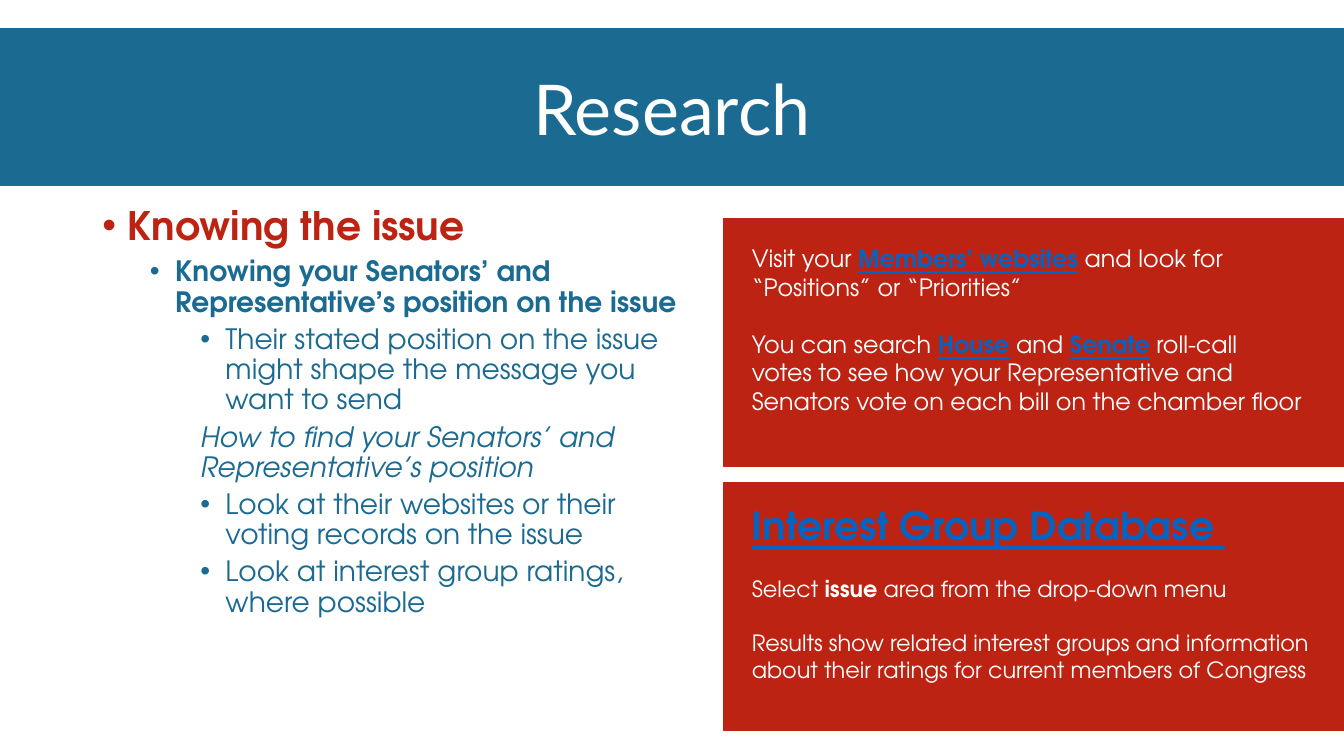
from lxml.etree import SubElement
from pptx import Presentation
from pptx.dml.color import RGBColor
from pptx.enum.shapes import MSO_SHAPE
from pptx.enum.text import MSO_ANCHOR, MSO_AUTO_SIZE, PP_ALIGN
from pptx.oxml.ns import qn
from pptx.util import Pt

COLORS = {name: RGBColor.from_string(value) for name, value in {
    "blue": "1B6A91", "red": "BD2313", "white": "FFFFFF", "link": "0563C1",
}.items()}
FONT = "TeX Gyre Adventor"


def set_font(font, size, color, name=FONT):
    font.name = name
    font.size = Pt(size)
    font.color.rgb = COLORS[color]


def fill_box(shape, color, line_width):
    shape.fill.solid()
    shape.fill.fore_color.rgb = COLORS[color]
    shape.line.color.rgb = COLORS[color]
    shape.line.width = Pt(line_width)


presentation = Presentation()
presentation.slide_width, presentation.slide_height = Pt(960), Pt(540)
slide = presentation.slides.add_slide(presentation.slide_layouts[5])

# Title band
title = slide.shapes.title
title.left, title.top, title.width, title.height = Pt(0), Pt(20.5), Pt(960), Pt(112)
fill_box(title, "blue", 1.5)
title.text_frame.text = "Research"
title.text_frame.auto_size = MSO_AUTO_SIZE.NONE
title.text_frame.vertical_anchor = MSO_ANCHOR.MIDDLE
title.text_frame.paragraphs[0].alignment = PP_ALIGN.CENTER
set_font(title.text_frame.paragraphs[0].font, 50, "white", "Lato")

# Outline: text, level, left margin, bulleted, bold, italic
heading = [("Knowing the issue", 0, 18, True, True, False)]
points = [
    ("Knowing your Senators’ and Representative’s position on the issue", 0, 18, True, True, False),
    ("Their stated position on the issue might shape the message you want to send",
     1, 54, True, False, False),
    ("How to find your Senators’ and Representative’s position", 1, 36, False, False, True),
    ("Look at their websites or their voting records on the issue", 1, 54, True, False, False),
    ("Look at interest group ratings, where possible", 1, 54, True, False, False),
]
outlines = [
    ((66, 144, 828, 342.5), 28, "red", heading),
    ((100, 180.5, 407.5, 342.5), 20, "blue", points),
]
for bounds, size, color, items in outlines:
    frame = slide.shapes.add_textbox(*map(Pt, bounds)).text_frame
    frame.word_wrap = True
    for index, (text, level, margin, bulleted, bold, italic) in enumerate(items):
        paragraph = frame.add_paragraph() if index else frame.paragraphs[0]
        paragraph.text = text
        paragraph.level = level
        paragraph.line_spacing = 0.9
        paragraph.space_before = Pt(5 if level else 10)
        set_font(paragraph.font, size, color)
        paragraph.font.bold, paragraph.font.italic = bold, italic
        properties = paragraph._p.get_or_add_pPr()
        properties.set("marL", str(Pt(margin)))
        if bulleted:
            properties.set("indent", str(Pt(-18)))
            SubElement(properties, qn("a:buFont")).set("typeface", "Arial")
            SubElement(properties, qn("a:buChar")).set("char", "•")

# Cards: top, top inset, lines of (size, space before, runs of (text, style))
cards = [
    (156.2, 18, [
        (17, 0, [("Visit your ", ""), ("Members’ websites", "link"), (" and look for", "")]),
        (17, 0, [("“Positions” or “Priorities”", "")]),
        (17, 20.4, [("You can search ", ""), ("House", "link"), (" and ", ""),
                    ("Senate", "link"), (" roll-call", "")]),
        (17, 0, [("votes to see how your Representative and", "")]),
        (17, 0, [("Senators vote on each bill on the chamber floor", "")]),
    ]),
    (345, 13, [
        (28, 0, [("Interest Group Database ", "link")]),
        (16, 19.2, [("Select ", ""), ("issue", "bold"), (" area from the drop-down menu", "")]),
        (16, 19.2, [("Results show related interest groups and information", "")]),
        (16, 0, [("about their ratings for current members of Congress", "")]),
    ]),
]
for top, inset, lines in cards:
    card = slide.shapes.add_shape(MSO_SHAPE.RECTANGLE, Pt(517), Pt(top), Pt(443), Pt(177))
    card.shadow.inherit = False
    fill_box(card, "red", 1)
    frame = card.text_frame
    frame.word_wrap = True
    frame.vertical_anchor = MSO_ANCHOR.TOP
    frame.margin_left, frame.margin_right, frame.margin_top = Pt(20), Pt(4), Pt(inset)
    for index, (size, space, runs) in enumerate(lines):
        paragraph = frame.add_paragraph() if index else frame.paragraphs[0]
        paragraph.alignment = PP_ALIGN.LEFT
        paragraph.space_before = Pt(space)
        set_font(paragraph.font, size, "white")
        for text, style in runs:
            run = paragraph.add_run()
            run.text = text
            if style:
                run.font.bold = True
            if style == "link":
                run.font.underline = True
                run.font.color.rgb = COLORS["link"]

presentation.save("out.pptx")
